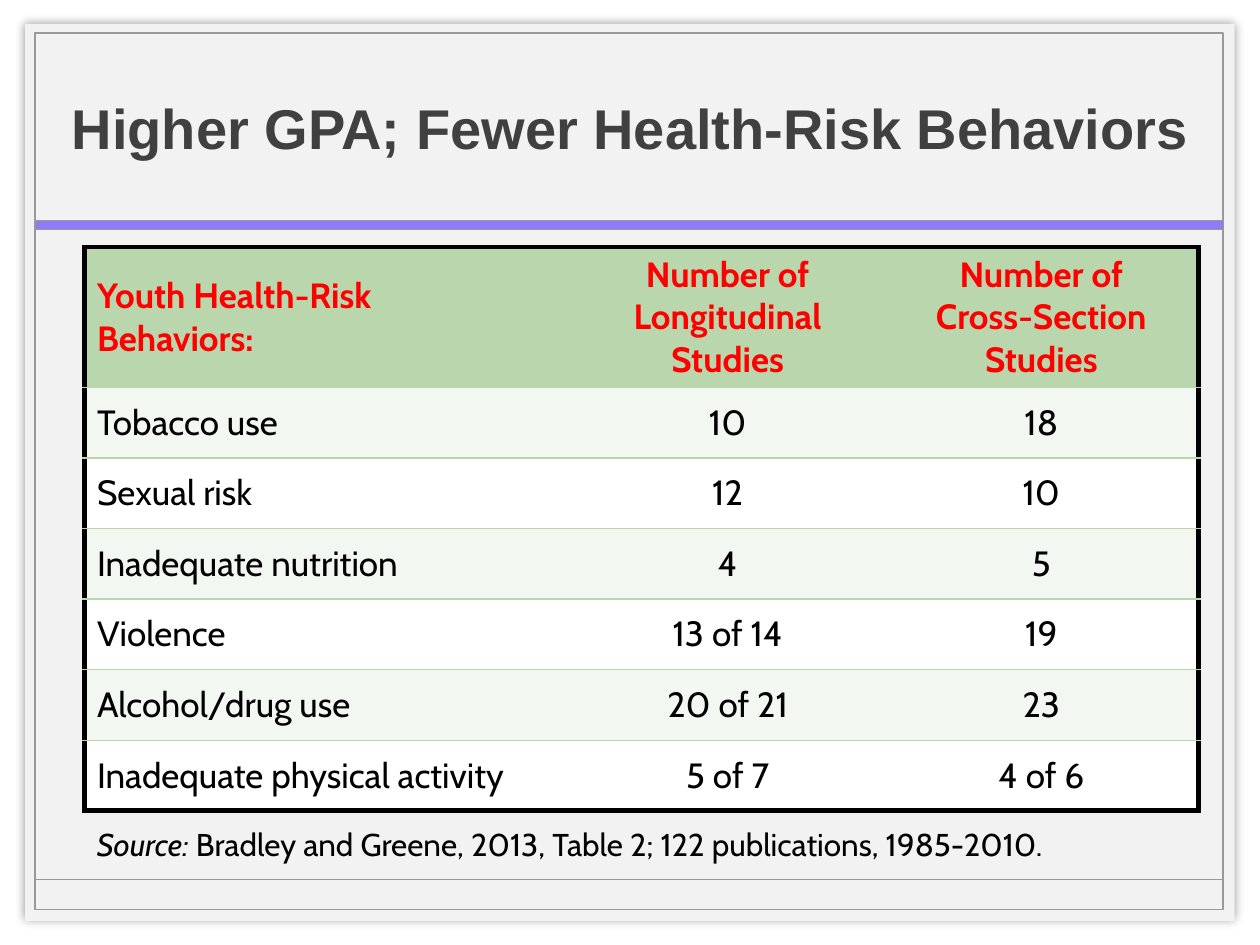
import pptx
import pptx.util
import pptx.dml.color
import pptx.enum.shapes
import pptx.enum.text
import pptx.oxml
import pptx.oxml.ns
from dataclasses import dataclass

Inches, Pt = pptx.util.Inches, pptx.util.Pt
Align, Anchor = pptx.enum.text.PP_ALIGN, pptx.enum.text.MSO_ANCHOR
Shapes = pptx.enum.shapes.MSO_SHAPE

# Content
TITLE = "Higher GPA; Fewer Health-Risk Behaviors"
HEADER = ("Youth Health-Risk\nBehaviors:", "Number of Longitudinal Studies",
          "Number of\nCross-Section Studies")
STUDIES = [
    ("Tobacco use", "10", "18"),
    ("Sexual risk", "12", "10"),
    ("Inadequate nutrition", "4", "5"),
    ("Violence", "13 of 14", "19"),
    ("Alcohol/drug use", "20 of 21", "23"),
    ("Inadequate physical activity", "5 of 7", "4 of 6"),
]
SOURCE = ("Source: ", "Bradley and Greene, 2013, Table 2; 122 publications, 1985-2010.")


@dataclass(frozen=True)
class Theme:
    panel: str = "F2F2F2"
    frame: str = "999999"
    accent: str = "8F7AF8"
    title: str = "404040"
    heading: str = "FF0000"
    ink: str = "000000"
    header_fill: str = "BAD6AD"
    bands: tuple = ("F3F7F1", "FFFFFF")
    title_font: str = "Arial"
    body_font: str = "Cabin"
    title_size: int = 32
    table_size: int = 20
    source_size: int = 18


THEME = Theme()

# Layout in inches
SLIDE_W, SLIDE_H = 10, 7.5
FRAME_LEFT, FRAME_TOP, FRAME_W, FRAME_H = 0.28, 0.26, 9.43, 6.96
RULE_Y = 6.98
TABLE_LEFT, TABLE_TOP = 0.67, 1.96
COLUMNS = (3.86, 2.49, 2.49)
HEADER_H, ROW_H = 1.09, 0.56


def rgb(color):
    return pptx.dml.color.RGBColor.from_string(color)


def style(font, name, size, color, bold=False):
    font.name, font.size, font.bold = name, Pt(size), bold
    font.color.rgb = rgb(color)


def add_box(slide, box, fill=None, line_width=None):
    shape = slide.shapes.add_shape(Shapes.RECTANGLE, *map(Inches, box))
    shape.shadow.inherit = False
    if fill:
        shape.fill.solid()
        shape.fill.fore_color.rgb = rgb(fill)
    else:
        shape.fill.background()
    if line_width:
        shape.line.color.rgb = rgb(THEME.frame)
        shape.line.width = Pt(line_width)
    else:
        shape.line.fill.background()
    return shape


def set_borders(cell, borders):
    """Draw each side given as (colour, points); hide the sides given as None."""
    properties = cell._tc.get_or_add_tcPr()
    for position, side in enumerate("LRTB"):
        border = borders[side]
        width = Pt(border[1]) if border else 0
        paint = (f'<a:solidFill><a:srgbClr val="{border[0]}"/></a:solidFill>'
                 if border else "<a:noFill/>")
        properties.insert(position, pptx.oxml.parse_xml(
            f'<a:ln{side} {pptx.oxml.ns.nsdecls("a")} w="{width}">{paint}</a:ln{side}>'))


def add_frame(slide):
    panel = add_box(slide, (0.2, 0.19, 9.6, 7.12), THEME.panel)
    effects = panel.element.spPr.find(pptx.oxml.ns.qn("a:effectLst"))
    effects.append(pptx.oxml.parse_xml(
        f'<a:outerShdw {pptx.oxml.ns.nsdecls("a")} blurRad="{Pt(5)}" dist="0" dir="0" '
        'algn="ctr" rotWithShape="0"><a:srgbClr val="000000">'
        '<a:alpha val="40000"/></a:srgbClr></a:outerShdw>'))
    add_box(slide, (FRAME_LEFT, FRAME_TOP, FRAME_W, FRAME_H), line_width=1)
    rule = slide.shapes.add_connector(
        pptx.enum.shapes.MSO_CONNECTOR.STRAIGHT, Inches(FRAME_LEFT), Inches(RULE_Y),
        Inches(FRAME_LEFT + FRAME_W), Inches(RULE_Y))
    rule.line.color.rgb = rgb(THEME.frame)
    rule.line.width = Pt(1)
    rule.element.spPr.append(pptx.oxml.parse_xml(
        f'<a:effectLst {pptx.oxml.ns.nsdecls("a")}/>'))
    add_box(slide, (FRAME_LEFT, 1.75, FRAME_W, 0.07), THEME.accent, 0.25)


def add_title(slide):
    title = slide.shapes.title
    slide.shapes.element.append(title.element)  # in front of the panel
    title.left, title.top, title.width, title.height = map(Inches, (0.42, 0.27, 9.17, 1.47))
    title.text_frame.text = TITLE
    title.text_frame.vertical_anchor = Anchor.MIDDLE
    heading = title.text_frame.paragraphs[0]
    heading.alignment = Align.CENTER
    style(heading.font, THEME.title_font, THEME.title_size, THEME.title, bold=True)


def add_studies(slide):
    rows = [HEADER] + STUDIES
    last_row, last_column = len(rows) - 1, len(COLUMNS) - 1
    table = slide.shapes.add_table(
        len(rows), len(COLUMNS), Inches(TABLE_LEFT), Inches(TABLE_TOP),
        Inches(sum(COLUMNS)), Inches(HEADER_H + ROW_H * last_row)).table
    table.first_row = table.horz_banding = False
    for column, width in zip(table.columns, COLUMNS):
        column.width = Inches(width)
    outer, inner = (THEME.ink, 3), (THEME.header_fill, 1)
    for r, texts in enumerate(rows):
        is_header = r == 0
        table.rows[r].height = Inches(HEADER_H if is_header else ROW_H)
        for c, text in enumerate(texts):
            cell = table.cell(r, c)
            cell.text = text
            cell.vertical_anchor = Anchor.MIDDLE
            cell.fill.solid()
            cell.fill.fore_color.rgb = rgb(
                THEME.header_fill if is_header else THEME.bands[(r - 1) % 2])
            for paragraph in cell.text_frame.paragraphs:
                paragraph.alignment = Align.CENTER if c else Align.LEFT
                style(paragraph.font, THEME.body_font, THEME.table_size,
                      THEME.heading if is_header else THEME.ink, is_header)
            set_borders(cell, {
                "L": outer if c == 0 else None,
                "R": outer if c == last_column else None,
                "T": outer if is_header else inner,
                "B": outer if r == last_row else inner,
            })


def add_source(slide):
    note = slide.shapes.add_textbox(*map(Inches, (TABLE_LEFT, 6.5, 8.58, 0.4)))
    note.text_frame.word_wrap = True
    line = note.text_frame.paragraphs[0]
    style(line.font, THEME.body_font, THEME.source_size, THEME.ink)
    for text, italic in zip(SOURCE, (True, False)):
        run = line.add_run()
        run.text = text
        run.font.italic = italic


def main():
    deck = pptx.Presentation()
    deck.slide_width, deck.slide_height = Inches(SLIDE_W), Inches(SLIDE_H)
    slide = deck.slides.add_slide(deck.slide_layouts[5])
    add_frame(slide)
    add_title(slide)
    add_studies(slide)
    add_source(slide)
    deck.save("out.pptx")


if __name__ == "__main__":
    main()
